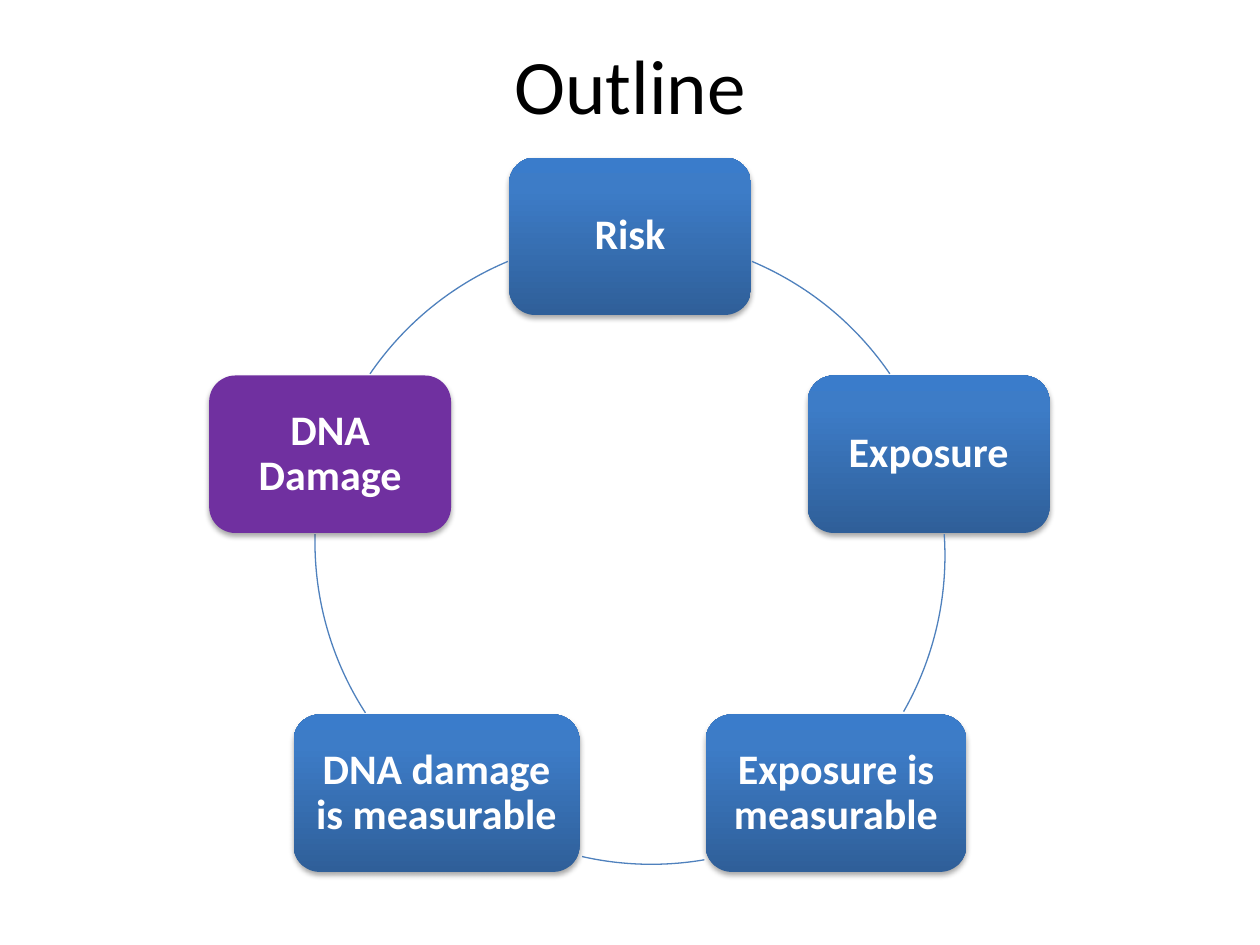
"""Build the outline slide: five boxes joined in a cycle."""
import copy

import lxml.etree
import pptx
import pptx.dml.color
import pptx.enum.shapes
import pptx.enum.text
import pptx.oxml.ns
import pptx.util

RGBColor = pptx.dml.color.RGBColor
BLACK = RGBColor(0x00, 0x00, 0x00)
WHITE = RGBColor(0xFF, 0xFF, 0xFF)
PURPLE = RGBColor(0x70, 0x30, 0xA0)
ARC_BLUE = RGBColor(0x4F, 0x81, 0xBD)
BLUE_STOPS = [
    (0, RGBColor(0x2F, 0x5F, 0x99)),
    (0.8, RGBColor(0x3D, 0x7C, 0xC7)),
    (1, RGBColor(0x3A, 0x7C, 0xCB)),
]
EMU_PER_PX = 9144
BOX_HEIGHT = 125
CIRCLE_SIZE = 500
SHAPES = pptx.enum.shapes.MSO_SHAPE

BOXES = [
    (404, 125, 192, "Risk", None),
    (641, 298, 192, "Exposure", None),
    (560, 567, 207, "Exposure is\vmeasurable", None),
    (233, 567, 227, "DNA damage\vis measurable", None),
    (166, 298, 192, "DNA Damage", PURPLE),
]
ARCS = [
    (250, 188, 292.8, 325.6),
    (250, 191, 356.1, 29.7),
    (267, 186, 80.3, 102.7),
    (250, 180, 147.1, 181.4),
    (250, 188, 214.4, 247.2),
]


def px(length):
    return pptx.util.Emu(length * EMU_PER_PX)


def apply(target, values):
    for name, value in values.items():
        setattr(target, name, value)


class SlideBuilder:
    """Hold the style and the current slide."""

    font_name = "Calibri"
    shadow = {"blurRad": "40000", "dist": "23000", "dir": "5400000", "rotWithShape": "0"}

    def __init__(self, slide):
        self.slide = slide

    def set_text(self, shape, text, size, colour, bold, spacing):
        frame = shape.text_frame
        frame.text = text
        apply(frame, {
            "word_wrap": True,
            "auto_size": pptx.enum.text.MSO_AUTO_SIZE.NONE,
            "vertical_anchor": pptx.enum.text.MSO_ANCHOR.MIDDLE,
            "margin_left": px(10),
            "margin_right": px(10),
        })
        paragraph = frame.paragraphs[0]
        apply(paragraph, {"alignment": pptx.enum.text.PP_ALIGN.CENTER, "line_spacing": spacing})
        for run in paragraph.runs:
            apply(run.font, {"name": self.font_name, "size": pptx.util.Pt(size), "bold": bold})
            run.font.color.rgb = colour

    def title(self, text):
        shape = self.slide.shapes.title
        apply(shape, {"left": px(50), "top": px(4), "width": px(900), "height": px(125)})
        self.set_text(shape, text, 44, BLACK, False, 1.0)

    def arc(self, left, top, start, end):
        shape = self.slide.shapes.add_shape(
            SHAPES.ARC, px(left), px(top), px(CIRCLE_SIZE), px(CIRCLE_SIZE))
        for index, degrees in enumerate((start, end)):
            shape.adjustments[index] = degrees * 0.6
        shape.shadow.inherit = False
        shape.fill.background()
        shape.line.color.rgb = ARC_BLUE
        shape.line.width = pptx.util.Pt(0.75)

    def box(self, left, top, width, text, colour):
        shape = self.slide.shapes.add_shape(
            SHAPES.ROUNDED_RECTANGLE, px(left), px(top), px(width), px(BOX_HEIGHT))
        shape.line.fill.background()
        if colour is None:
            self.fill_gradient(shape)
        else:
            shape.fill.solid()
            shape.fill.fore_color.rgb = colour
        self.cast_shadow(shape)
        self.set_text(shape, text, 24, WHITE, True, 0.9)

    def fill_gradient(self, shape):
        shape.fill.gradient()
        shape.fill.gradient_angle = 90
        stop_list = shape.element.spPr.find(".//" + pptx.oxml.ns.qn("a:gsLst"))
        stop_list.append(copy.deepcopy(stop_list[0]))
        for stop, (position, colour) in zip(shape.fill.gradient_stops, BLUE_STOPS):
            stop.position = position
            stop.color.rgb = colour

    def cast_shadow(self, shape):
        qn = pptx.oxml.ns.qn
        shape.shadow.inherit = False
        effects = shape.element.spPr.find(qn("a:effectLst"))
        outer = lxml.etree.SubElement(effects, qn("a:outerShdw"), self.shadow)
        colour = lxml.etree.SubElement(outer, qn("a:srgbClr"), val=str(BLACK))
        lxml.etree.SubElement(colour, qn("a:alpha"), val="35000")


def main():
    presentation = pptx.Presentation()
    apply(presentation, {"slide_width": px(1000), "slide_height": px(750)})
    builder = SlideBuilder(presentation.slides.add_slide(presentation.slide_layouts[5]))
    builder.title("Outline")
    for box, arc in zip(BOXES, ARCS):
        builder.box(*box)
        builder.arc(*arc)
    presentation.save("out.pptx")


if __name__ == "__main__":
    main()
